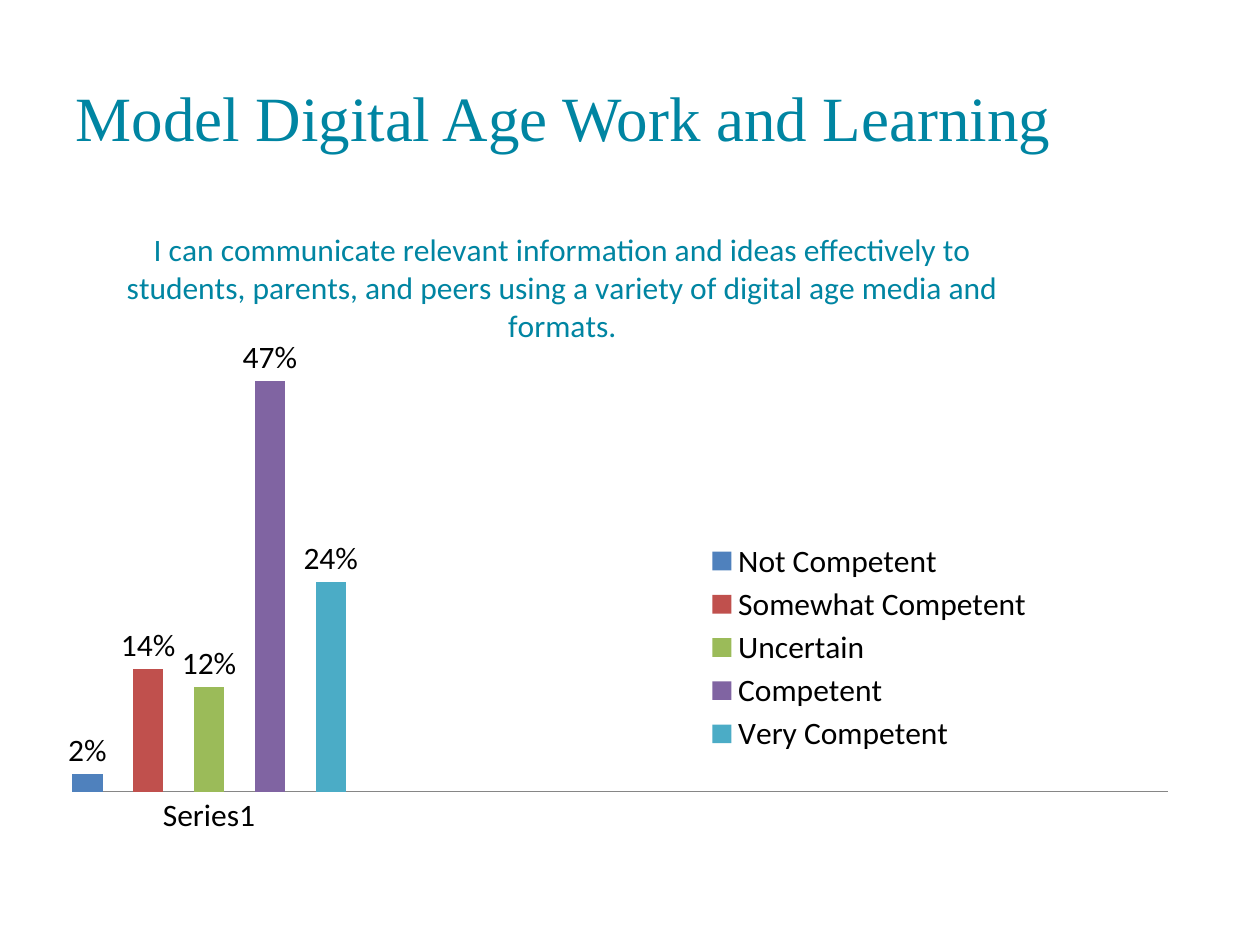
"""Build a slide with a clustered column chart of competence ratings."""
from pptx import Presentation
from pptx import util as u
from pptx.chart.data import CategoryChartData
from pptx.dml.color import RGBColor
from pptx.enum import chart as ch, text
from pptx.oxml import parse_xml
from pptx.oxml.ns import nsdecls, qn


def paint(item, shade):
    item.solid()
    item.fore_color.rgb = RGBColor.from_string(shade)


def place(node, prior, inner=False, **spots):
    for old in node.findall(qn("c:layout")):
        node.remove(old)
    tags = '<c:layoutTarget val="inner"/>' if inner else ""
    tags += "".join(f'<c:{key}Mode val="edge"/>' for key in "xy")
    tags += "".join(f'<c:{key} val="{val}"/>' for key, val in spots.items())
    node.insert(prior, parse_xml(
        f'<c:layout {nsdecls("c")}><c:manualLayout>{tags}</c:manualLayout></c:layout>'))


TEAL = "0085A2"
RATES = [
    ("Not Competent", 0.02, "4F81BD"),
    ("Somewhat Competent", 0.14, "C0504D"),
    ("Uncertain", 0.12, "9BBB59"),
    ("Competent", 0.47, "8064A2"),
    ("Very Competent", 0.24, "4BACC6"),
]

deck = Presentation()
deck.slide_width, deck.slide_height = u.Inches(10), u.Inches(7.5)
slide = deck.slides.add_slide(deck.slide_layouts[5])

head = slide.shapes.title
head.left, head.top = u.Inches(0.5), u.Inches(0.3)
head.width, head.height = u.Inches(8.21), u.Inches(1.25)
frame = head.text_frame
frame.text = "Model Digital Age Work and Learning"
frame.vertical_anchor = text.MSO_ANCHOR.MIDDLE
line = frame.paragraphs[0]
line.alignment = text.PP_ALIGN.LEFT
font = line.runs[0].font
font.name, font.size = "Times New Roman", u.Pt(36)
paint(font.fill, TEAL)

data = CategoryChartData(number_format="0%")
data.categories = ["Series1", "", "", ""]
for name, rate, shade in RATES:
    data.add_series(name, [rate, None, None, None])
chart = slide.shapes.add_chart(
    ch.XL_CHART_TYPE.COLUMN_CLUSTERED, u.Inches(0.42), u.Inches(1.67),
    u.Inches(9), u.Inches(4.95), data).chart
chart.font.name, chart.font.size = "Calibri", u.Pt(18)
paint(chart.font.fill, "000000")

chart.has_title = True
label = chart.chart_title.text_frame
label.text = ("I can communicate relevant information and ideas effectively to "
              "students, parents, and peers using a variety of digital age media "
              "and formats.")
font = label.paragraphs[0].runs[0].font
font.name, font.size, font.bold = "Calibri", u.Pt(18), False
paint(font.fill, TEAL)
place(chart.chart_title._element, 1, x=0.06, y=0.02)

plot = chart.plots[0]
plot.gap_width, plot.overlap, plot.vary_by_categories = 0, -100, False
for bar, (name, rate, shade) in zip(plot.series, RATES):
    paint(bar.format.fill, shade)
    bar.invert_if_negative = False
    tags = bar.data_labels
    tags.show_value = True
    tags.position = ch.XL_LABEL_POSITION.OUTSIDE_END
    tags.number_format, tags.number_format_is_linked = "0%", False

chart.value_axis.visible = False
chart.value_axis.has_major_gridlines = False
chart.value_axis.minimum_scale, chart.value_axis.maximum_scale = 0, 0.5
base = chart.category_axis
base.major_tick_mark = ch.XL_TICK_MARK.NONE
paint(base.format.line.fill, "868686")
place(chart._chartSpace.chart.plotArea, 0, True, x=0.017, y=0.235, w=0.966, h=0.709)

chart.has_legend = True
key = chart.legend
key.position = ch.XL_LEGEND_POSITION.BOTTOM
key.include_in_layout = False
place(key._element, 1, x=0.57, y=0.53, w=0.3, h=0.36)

deck.save("out.pptx")
